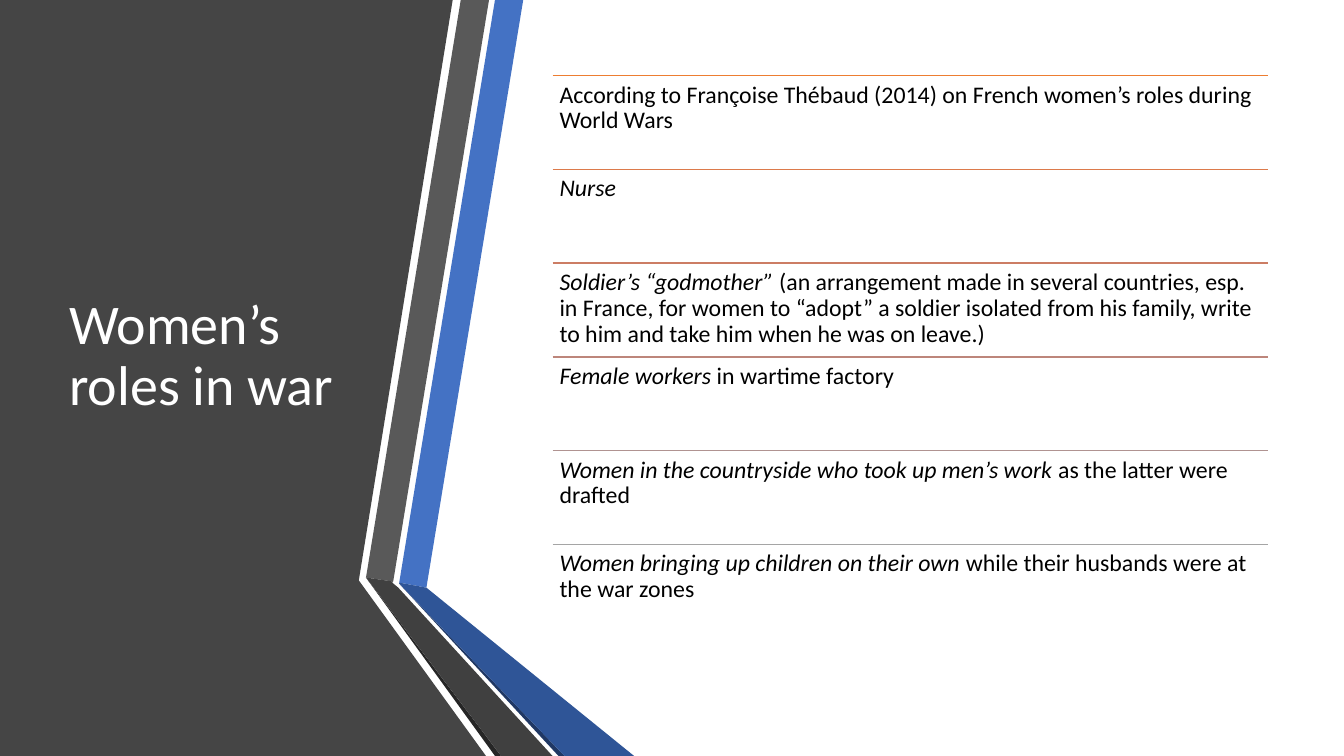
from lxml import etree
from pptx import Presentation
from pptx.dml.color import RGBColor
from pptx.enum.shapes import MSO_CONNECTOR
from pptx.enum.text import MSO_ANCHOR
from pptx.oxml.ns import qn
from pptx.util import Pt

PX = 9144  # EMU per px, 100 px to the inch
FONT = "Calibri"
WHITE = RGBColor(0xFF, 0xFF, 0xFF)
BLACK = RGBColor(0x00, 0x00, 0x00)
CHARCOAL = RGBColor(0x45, 0x45, 0x45)
BLUE = RGBColor(0x44, 0x72, 0xC4)
BLUE_FOLD = RGBColor(0x2F, 0x55, 0x97)
BLUE_EDGE = RGBColor(0x20, 0x38, 0x64)
GRAY = RGBColor(0x59, 0x59, 0x59)
GRAY_FOLD = RGBColor(0x40, 0x40, 0x40)
GRAY_EDGE = RGBColor(0x26, 0x26, 0x26)

TITLE = "Women’s roles in war"

# Rule colour, italic part, upright part
ROLES = [
    (RGBColor(0xED, 0x7D, 0x31), "",
     "According to Françoise Thébaud (2014) on French women’s roles during World Wars"),
    (RGBColor(0xDC, 0x7A, 0x4B), "Nurse", ""),
    (RGBColor(0xCC, 0x7D, 0x64), "Soldier’s “godmother” ",
     "(an arrangement made in several countries, esp. in France, for women to “adopt” "
     "a soldier isolated from his family, write to him and take him when he was on leave.)"),
    (RGBColor(0xBD, 0x86, 0x7B), "Female workers ", "in wartime factory"),
    (RGBColor(0xB0, 0x93, 0x91), "Women in the countryside who took up men’s work ",
     "as the latter were drafted"),
    (RGBColor(0xA5, 0xA5, 0xA5), "Women bringing up children on their own ",
     "while their husbands were at the war zones"),
]

# Side panel and folded ribbons, back to front: colour, corners in px
PANELS = [
    (CHARCOAL, [(0, 0), (449, 0), (356, 575), (356, 576), (482, 750), (0, 750)]),
    (BLUE, [(396, 578), (423, 583), (519, 0), (491, 0)]),
    (GRAY, [(485, 0), (457, 0), (363, 573), (390, 577)]),
    (GRAY_EDGE, [(363, 573), (491, 750), (497, 750)]),
    (BLUE_EDGE, [(396, 579), (554, 750), (560, 750)]),
    (BLUE_FOLD, [(396, 579), (560, 750), (629, 750), (423, 583), (396, 578)]),
    (GRAY_FOLD, [(548, 750), (395, 583), (389, 578), (390, 577), (363, 573), (497, 750)]),
]

LIST_LEFT, LIST_TOP, LIST_WIDTH, ROW = 548, 75, 710, 93
INSET = 7

prs = Presentation()
prs.slide_width, prs.slide_height = 1333 * PX, 750 * PX
s = prs.slides.add_slide(prs.slide_layouts[6])


def add_text(x, y, w, h, runs, size, color, anchor, inset=None):
    tf = s.shapes.add_textbox(x * PX, y * PX, w * PX, h * PX).text_frame
    tf.word_wrap = True
    tf.vertical_anchor = anchor
    if inset is not None:
        tf.margin_left = tf.margin_top = tf.margin_right = tf.margin_bottom = inset * PX
    p = tf.paragraphs[0]
    p.line_spacing = 0.9
    for text, italic in runs:
        if text:
            r = p.add_run()
            r.text = text
            r.font.name, r.font.size, r.font.italic = FONT, Pt(size), italic
            r.font.color.rgb = color


# Panel and ribbons
for color, corners in PANELS:
    outline = s.shapes.build_freeform(*corners[0], scale=PX)
    outline.add_line_segments(corners[1:], close=True)
    sp = outline.convert_to_shape()
    sp.shadow.inherit = False
    sp.fill.solid()
    sp.fill.fore_color.rgb = color
    sp.line.fill.background()

# Title
add_text(59, 75, 304, 558, [(TITLE, False)], 40, WHITE, MSO_ANCHOR.MIDDLE)

# Roles, each under its own rule
for i, (color, italic_part, upright_part) in enumerate(ROLES):
    y = LIST_TOP + i * ROW
    rule = s.shapes.add_connector(MSO_CONNECTOR.STRAIGHT, LIST_LEFT * PX, y * PX,
                                  (LIST_LEFT + LIST_WIDTH) * PX, y * PX)
    rule.line.color.rgb = color
    rule.line.width = Pt(1)
    etree.SubElement(rule._element.spPr, qn("a:effectLst"))
    add_text(LIST_LEFT, y, LIST_WIDTH, ROW, [(italic_part, True), (upright_part, False)],
             17, BLACK, MSO_ANCHOR.TOP, INSET)

prs.save("out.pptx")
